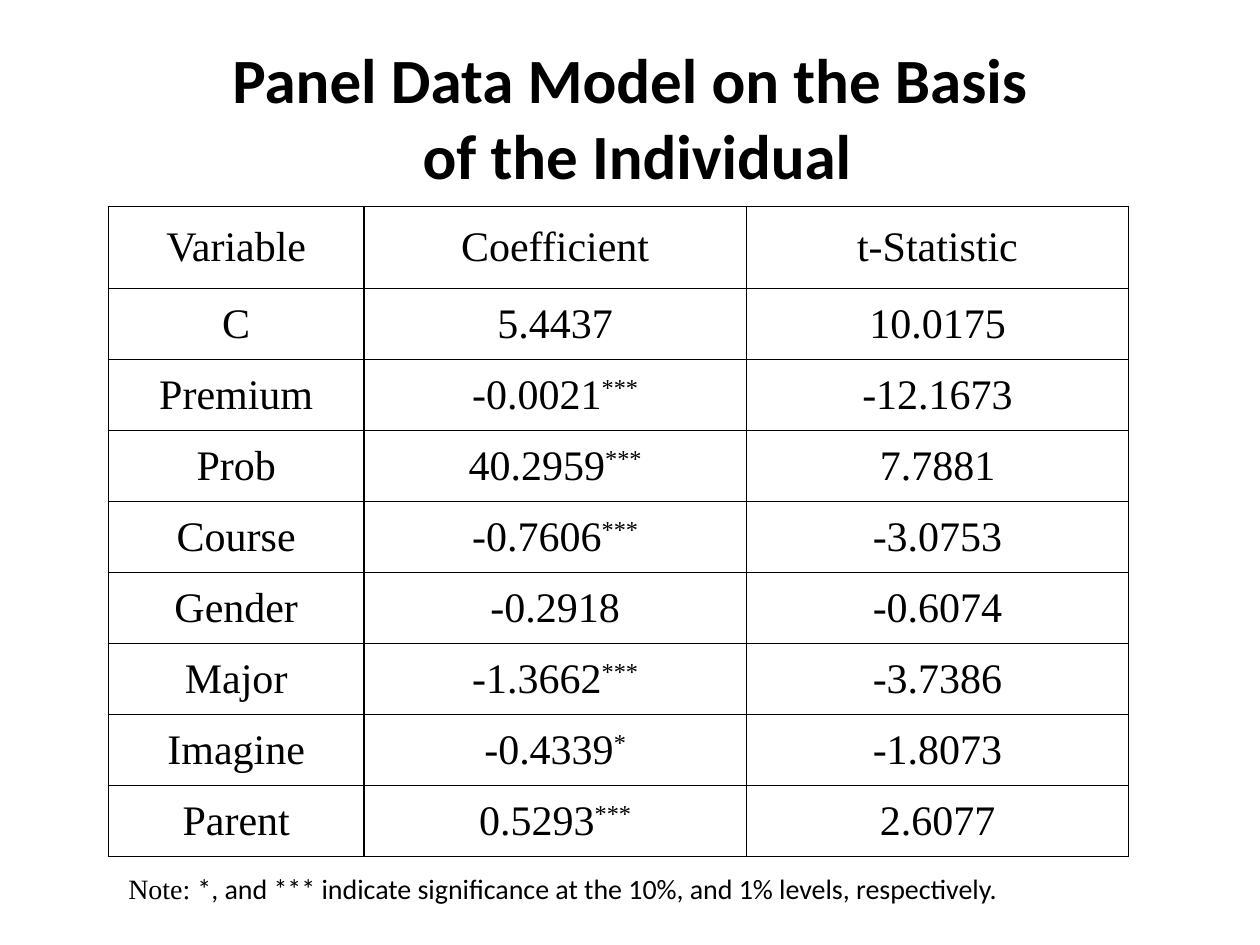
from lxml import etree
from pptx import Presentation
from pptx.dml.color import RGBColor
from pptx.enum.text import MSO_ANCHOR, MSO_AUTO_SIZE, PP_ALIGN
from pptx.oxml.ns import qn
from pptx.util import Pt

BLACK = RGBColor(0x00, 0x00, 0x00)
CENTER, LEFT = PP_ALIGN.CENTER, PP_ALIGN.LEFT
MIDDLE, TOP = MSO_ANCHOR.MIDDLE, MSO_ANCHOR.TOP
FIT_SHAPE, NO_FIT = MSO_AUTO_SIZE.SHAPE_TO_FIT_TEXT, MSO_AUTO_SIZE.NONE
SANS, SERIF = "Calibri", "Times New Roman"
TITLE_ONLY = 5

HEADINGS = ("Variable", "Coefficient", "t-Statistic")
RESULTS = [
    ("C", "5.4437", "10.0175"),
    ("Premium", "-0.0021***", "-12.1673"),
    ("Prob", "40.2959***", "7.7881"),
    ("Course", "-0.7606***", "-3.0753"),
    ("Gender", "-0.2918", "-0.6074"),
    ("Major", "-1.3662***", "-3.7386"),
    ("Imagine", "-0.4339*", "-1.8073"),
    ("Parent", "0.5293***", "2.6077"),
]
COLUMN_WIDTHS = (146, 218.5, 218.5)
HEADING_HEIGHT, RESULT_HEIGHT = 46.8, 40.57


def add_text(paragraph, text, *, font, size, bold=False, align=LEFT, raised=False):
    paragraph.alignment = align
    for index, line in enumerate(text.split("\n")):
        if index:
            paragraph.add_line_break()
        run = paragraph.add_run()
        run.text = line
        run.font.name = font
        run.font.size = Pt(size)
        run.font.bold = bold
        run.font.color.rgb = BLACK
        if raised:
            run.font._element.set("baseline", "30000")


class SlideBuilder:
    def __init__(self, slide, border_width=1):
        self.slide = slide
        self.border_width = border_width

    def title(self, text, left, top, width, height):
        shape = self.slide.shapes.title
        shape.left, shape.top, shape.width, shape.height = map(Pt, (left, top, width, height))
        frame = shape.text_frame
        frame.auto_size = NO_FIT
        frame.vertical_anchor = MIDDLE
        add_text(frame.paragraphs[0], text, font=SANS, size=36, bold=True, align=CENTER)

    def border(self, cell):
        properties = cell._tc.get_or_add_tcPr()
        for side in ("a:lnL", "a:lnR", "a:lnT", "a:lnB"):
            line = etree.SubElement(properties, qn(side), w=str(Pt(self.border_width)))
            fill = etree.SubElement(line, qn("a:solidFill"))
            etree.SubElement(fill, qn("a:srgbClr"), val=str(BLACK))

    def cell(self, cell, text):
        self.border(cell)
        cell.fill.background()
        cell.vertical_anchor = MIDDLE
        paragraph = cell.text_frame.paragraphs[0]
        value = text.rstrip("*")
        add_text(paragraph, value, font=SERIF, size=24, align=CENTER)
        stars = text[len(value):]
        if stars:
            add_text(paragraph, stars, font=SERIF, size=24, align=CENTER, raised=True)

    def table(self, rows, left, top, widths, heights):
        table = self.slide.shapes.add_table(
            len(rows), len(widths), Pt(left), Pt(top), Pt(sum(widths)), Pt(sum(heights))
        ).table
        table.first_row = table.horz_banding = False
        for column, width in zip(table.columns, widths):
            column.width = Pt(width)
        for row, height, texts in zip(table.rows, heights, rows):
            row.height = Pt(height)
            for cell, text in zip(row.cells, texts):
                self.cell(cell, text)

    def note(self, label, text, left, top, width, height):
        shape = self.slide.shapes.add_textbox(Pt(left), Pt(top), Pt(width), Pt(height))
        frame = shape.text_frame
        frame.word_wrap = True
        frame.auto_size = FIT_SHAPE
        frame.vertical_anchor = TOP
        frame.margin_left = frame.margin_right = frame.margin_top = frame.margin_bottom = 0
        paragraph = frame.paragraphs[0]
        paragraph.space_before = Pt(1.6)
        add_text(paragraph, label, font=SERIF, size=16)
        add_text(paragraph, text, font=SANS, size=16)


def main():
    presentation = Presentation()
    presentation.slide_width, presentation.slide_height = Pt(720), Pt(540)
    slide = presentation.slides.add_slide(presentation.slide_layouts[TITLE_ONLY])
    builder = SlideBuilder(slide)
    builder.title("Panel Data Model on the Basis\n of the Individual", 36, 21.6, 648, 90)
    heights = [HEADING_HEIGHT] + [RESULT_HEIGHT] * len(RESULTS)
    builder.table([HEADINGS] + RESULTS, 62, 118, COLUMN_WIDTHS, heights)
    builder.note(
        "Note: ",
        "*, and *** indicate significance at the 10%, and 1% levels, respectively.",
        73.4, 498.2, 568, 19.5,
    )
    presentation.save("out.pptx")


if __name__ == "__main__":
    main()
